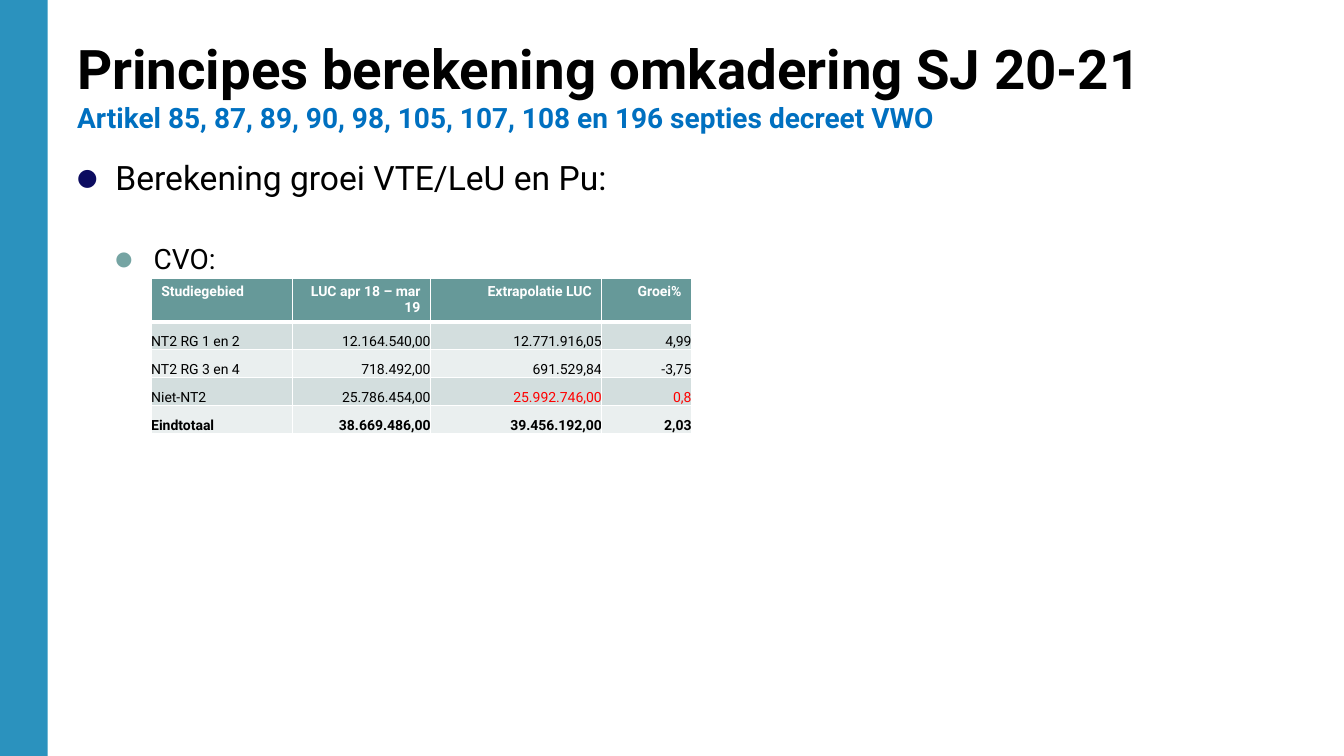
from lxml.etree import SubElement
from pptx import Presentation
from pptx.dml.color import RGBColor
from pptx.enum.shapes import MSO_SHAPE
from pptx.enum.text import MSO_ANCHOR, PP_ALIGN
from pptx.oxml.ns import qn
from pptx.util import Inches, Pt

WIDTH, HEIGHT = Inches(13.33), Inches(7.5)
FONT = "Roboto"

BLACK = RGBColor(0x00, 0x00, 0x00)
WHITE = RGBColor(0xFF, 0xFF, 0xFF)
RED = RGBColor(0xFF, 0x00, 0x00)
SIDEBAR_BLUE = RGBColor(0x2B, 0x92, 0xBE)
SUBTITLE_BLUE = RGBColor(0x00, 0x70, 0xC0)
BULLET_NAVY = RGBColor(0x0C, 0x0C, 0x60)
BULLET_TEAL = RGBColor(0x75, 0xA4, 0xA3)
HEADER_TEAL = RGBColor(0x66, 0x99, 0x99)
BANDS = [RGBColor(0xD3, 0xDE, 0xDE), RGBColor(0xEA, 0xEF, 0xEF)]

GROWTH_ROWS = [
    ["Studiegebied", "LUC apr 18 – mar 19", "Extrapolatie LUC", "Groei%"],
    ["NT2 RG 1 en 2", "12.164.540,00", "12.771.916,05", "4,99"],
    ["NT2 RG 3 en 4", "718.492,00", "691.529,84", "-3,75"],
    ["Niet-NT2", "25.786.454,00", "25.992.746,00", "0,8"],
    ["Eindtotaal", "38.669.486,00", "39.456.192,00", "2,03"],
]
GROWTH_COLUMNS = [10.5, 10.28, 12.75, 6.68]
GROWTH_ROW_HEIGHT = 3.7
RED_CELLS = {(3, 2), (3, 3)}


def across(columns):
    """Length of a number of columns; the slide is 100 columns wide."""
    return round(WIDTH * columns / 100)


def down(rows):
    """Length of a number of rows; the slide is 100 rows high."""
    return round(HEIGHT * rows / 100)


def set_font(paragraph, size, color, bold=False):
    font = paragraph.font
    font.name, font.size, font.bold = FONT, Pt(size), bold
    font.color.rgb = color


def add_sidebar(slide):
    sidebar = slide.shapes.add_shape(MSO_SHAPE.RECTANGLE, 0, 0, across(3.55), HEIGHT)
    sidebar.shadow.inherit = False
    sidebar.fill.solid()
    sidebar.fill.fore_color.rgb = SIDEBAR_BLUE
    sidebar.line.fill.background()


def add_text_frame(slide, left, top, width, height, anchor):
    box = slide.shapes.add_textbox(across(left), down(top), across(width), down(height))
    frame = box.text_frame
    frame.word_wrap = True
    frame.vertical_anchor = anchor
    return frame


def add_title(slide, title, subtitle):
    frame = add_text_frame(slide, 5, 1.73, 93.1, 16.67, MSO_ANCHOR.BOTTOM)
    frame.text = f"{title}\n{subtitle}"
    set_font(frame.paragraphs[0], 39, BLACK, bold=True)
    set_font(frame.paragraphs[1], 20, SUBTITLE_BLUE, bold=True)


def set_bullet(paragraph, level, color):
    indent = Inches(0.38)
    paragraph.level = level
    properties = paragraph._p.get_or_add_pPr()
    properties.set("marL", str(indent * (level + 1)))
    properties.set("indent", str(-indent))
    bullet_color = SubElement(properties, qn("a:buClr"))
    SubElement(bullet_color, qn("a:srgbClr"), val=str(color))
    SubElement(properties, qn("a:buSzPct"), val="70000")
    SubElement(properties, qn("a:buFont"), typeface=FONT)
    SubElement(properties, qn("a:buChar"), char="●")


def add_body(slide, items):
    """Each item is text, level, size, bullet colour and space before in points."""
    frame = add_text_frame(slide, 5, 20.67, 90, 69.33, MSO_ANCHOR.TOP)
    frame.text = "\n".join(item[0] for item in items)
    for paragraph, (_, level, size, color, space) in zip(frame.paragraphs, items):
        set_bullet(paragraph, level, color)
        paragraph.line_spacing = 0.9
        paragraph.space_before = Pt(space)
        set_font(paragraph, size, BLACK)


def set_borders(cell, bottom_width):
    properties = cell._tc.get_or_add_tcPr()
    for side, width in (("L", 1), ("R", 1), ("T", 1), ("B", bottom_width)):
        line = SubElement(properties, qn(f"a:ln{side}"), w=str(Pt(width)))
        fill = SubElement(line, qn("a:solidFill"))
        SubElement(fill, qn("a:srgbClr"), val=str(WHITE))


def fill_cell(cell, text, row, column):
    header = row == 0
    total = row == len(GROWTH_ROWS) - 1
    set_borders(cell, 3 if header else 1)
    cell.fill.solid()
    cell.fill.fore_color.rgb = HEADER_TEAL if header else BANDS[(row - 1) % 2]
    if not header:
        cell.vertical_anchor = MSO_ANCHOR.BOTTOM
        cell.margin_left = cell.margin_right = 0
        cell.margin_top = cell.margin_bottom = 0
    cell.text = text
    paragraph = cell.text_frame.paragraphs[0]
    paragraph.alignment = PP_ALIGN.RIGHT if column else PP_ALIGN.LEFT
    color = WHITE if header else RED if (row, column) in RED_CELLS else BLACK
    set_font(paragraph, 10, color, bold=header or total)


def add_growth_table(slide):
    frame = slide.shapes.add_table(
        len(GROWTH_ROWS), len(GROWTH_COLUMNS), across(11.25), down(36.8),
        across(sum(GROWTH_COLUMNS)), down(GROWTH_ROW_HEIGHT * len(GROWTH_ROWS)))
    table = frame.table
    for column, width in zip(table.columns, GROWTH_COLUMNS):
        column.width = across(width)
    for row, texts in enumerate(GROWTH_ROWS):
        table.rows[row].height = down(GROWTH_ROW_HEIGHT)
        for column, text in enumerate(texts):
            fill_cell(table.cell(row, column), text, row, column)


def main():
    presentation = Presentation()
    presentation.slide_width, presentation.slide_height = WIDTH, HEIGHT
    slide = presentation.slides.add_slide(presentation.slide_layouts[6])
    add_sidebar(slide)
    add_title(slide, "Principes berekening omkadering SJ 20-21",
              "Artikel 85, 87, 89, 90, 98, 105, 107, 108 en 196 septies decreet VWO")
    add_body(slide, [
        ("Berekening groei VTE/LeU en Pu:", 0, 24, BULLET_NAVY, 5),
        ("CVO:", 1, 20, BULLET_TEAL, 34),
    ])
    add_growth_table(slide)
    presentation.save("out.pptx")


if __name__ == "__main__":
    main()
